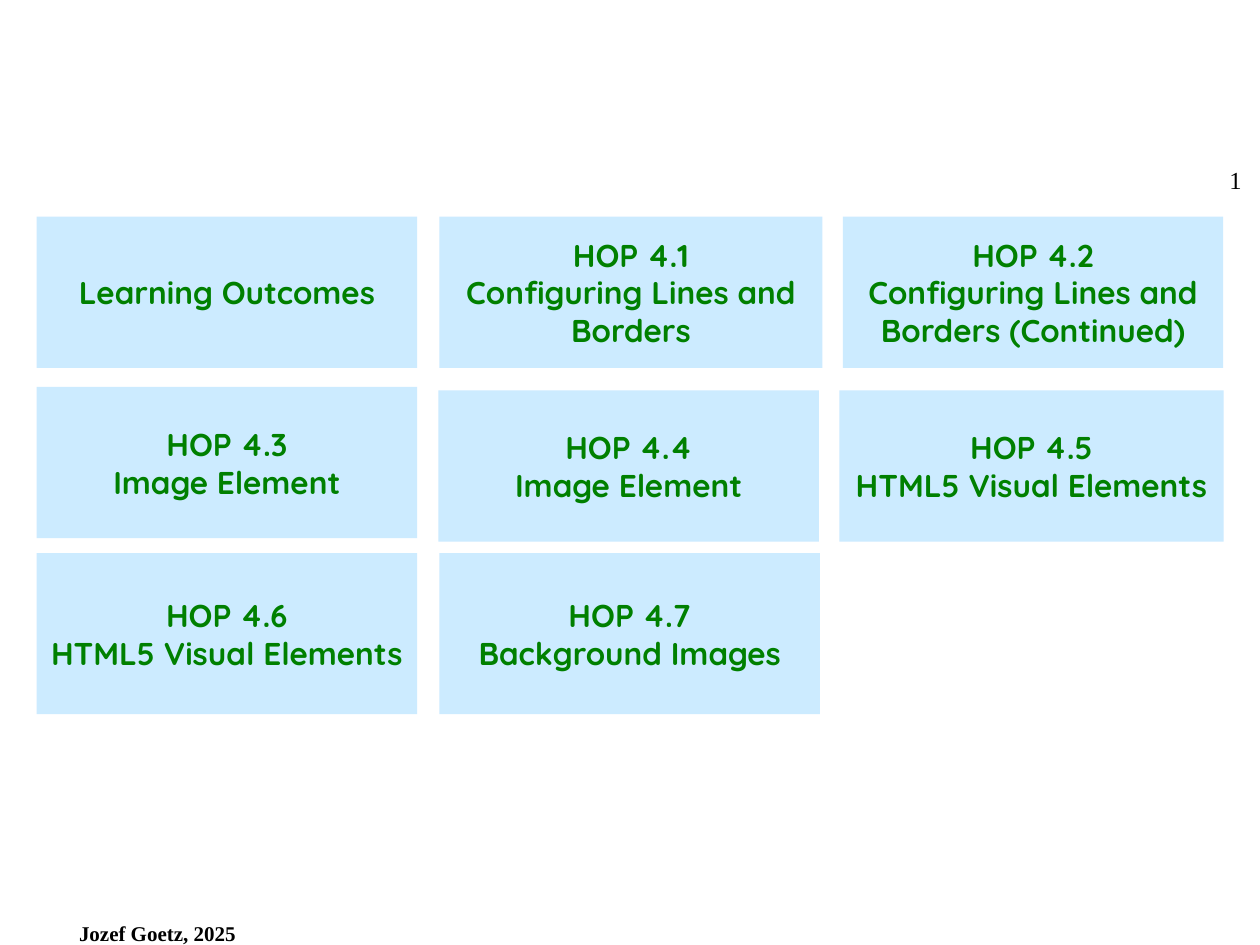
from dataclasses import dataclass

from pptx import Presentation
from pptx import util as u
from pptx.dml.color import RGBColor
from pptx.enum import shapes, text


@dataclass(frozen=True)
class Theme:
    tile: RGBColor = RGBColor(0xCC, 0xEB, 0xFF)
    green: RGBColor = RGBColor(0x00, 0x80, 0x00)
    black: RGBColor = RGBColor(0x00, 0x00, 0x00)
    sans: str = "Quicksand"
    serif: str = "Times New Roman"
    head: int = 18
    page: int = 14
    foot: int = 12


class Deck:
    """Holds the theme and the slide being filled."""

    def __init__(self, slide, theme):
        self.slide = slide
        self.theme = theme

    def fill_text(self, shape, lines, align, anchor, color, **font):
        frame = shape.text_frame
        frame.word_wrap = True
        frame.vertical_anchor = anchor
        frame.text = "\n".join(lines)
        for para in frame.paragraphs:
            para.alignment = align
            para.font.color.rgb = color
            for key, value in font.items():
                setattr(para.font, key, value)

    def tile(self, box, lines):
        t = self.theme
        shape = self.slide.shapes.add_shape(
            shapes.MSO_SHAPE.RECTANGLE, *map(u.Cm, box))
        shape.shadow.inherit = False
        shape.fill.solid()
        shape.fill.fore_color.rgb = t.tile
        shape.line.fill.background()
        self.fill_text(shape, lines, text.PP_ALIGN.CENTER,
                       text.MSO_ANCHOR.MIDDLE, t.green,
                       name=t.sans, size=u.Pt(t.head), bold=True)

    def label(self, box, words, align, size, bold=False):
        t = self.theme
        shape = self.slide.shapes.add_textbox(*map(u.Cm, box))
        self.fill_text(shape, [words], align, text.MSO_ANCHOR.TOP, t.black,
                       name=t.serif, size=u.Pt(size), bold=bold)


# Each row: tile height, then left, top, width and lines per tile
ROWS = [
    (3.05, [
        (0.74, 4.37, 7.67, ["Learning Outcomes"]),
        (8.86, 4.37, 7.72, ["HOP 4.1", "Configuring Lines and Borders"]),
        (16.99, 4.37, 7.67,
         ["HOP 4.2", "Configuring Lines and Borders (Continued)"]),
    ]),
    (3.05, [
        (0.74, 7.8, 7.67, ["HOP 4.3", "Image Element"]),
        (8.84, 7.87, 7.67, ["HOP 4.4", "Image Element"]),
        (16.92, 7.87, 7.75, ["HOP 4.5", "HTML5 Visual Elements"]),
    ]),
    (3.25, [
        (0.74, 11.15, 7.67, ["HOP 4.6", "HTML5 Visual Elements"]),
        (8.86, 11.15, 7.67, ["HOP 4.7", "Background Images"]),
    ]),
]


def main():
    prs = Presentation()
    prs.slide_width, prs.slide_height = u.Cm(25.4), u.Cm(19.05)
    theme = Theme()
    deck = Deck(prs.slides.add_slide(prs.slide_layouts[6]), theme)

    deck.label((0, 18.44, 6.35, 0.61), "Jozef Goetz, 2025",
               text.PP_ALIGN.CENTER, theme.foot, bold=True)
    deck.label((20.12, 3.2, 5.16, 1.27), "1",
               text.PP_ALIGN.RIGHT, theme.page)
    for height, tiles in ROWS:
        for left, top, width, lines in tiles:
            deck.tile((left, top, width, height), lines)

    prs.save("out.pptx")


if __name__ == "__main__":
    main()
